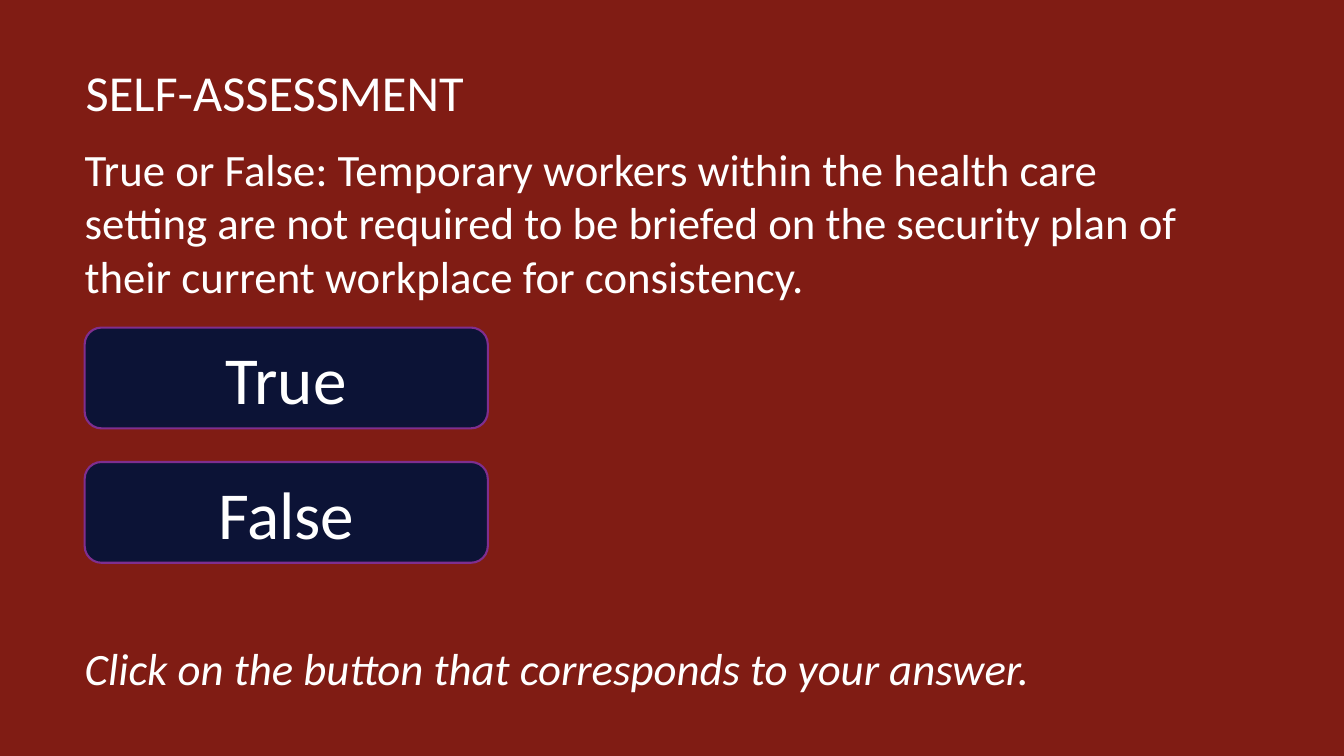
from pptx import Presentation
from pptx.dml.color import RGBColor
from pptx.enum import shapes, text
from pptx.util import Pt

FONT = "Calibri"
WHITE = "FFFFFF"
RED = "801C14"
NAVY = "0C1336"
PURPLE = "7F2E8F"
LEFT = 60.5
TEXT_WIDTH = 781.2


def rgb(value):
    return RGBColor.from_string(value)


def add_run(p, words, size, italic=False):
    r = p.add_run()
    r.text = words
    r.font.name = FONT
    r.font.size = Pt(size)
    r.font.italic = italic
    r.font.color.rgb = rgb(WHITE)


def set_frame(tf, anchor, inset=0):
    """Wrap the text, anchor it and give it equal insets."""
    tf.word_wrap = True
    tf.auto_size = text.MSO_AUTO_SIZE.NONE
    tf.vertical_anchor = anchor
    tf.margin_left = tf.margin_top = tf.margin_right = tf.margin_bottom = Pt(inset)


def set_title(slide, words):
    sp = slide.shapes.title
    sp.left, sp.top, sp.width, sp.height = Pt(LEFT), Pt(42), Pt(367), Pt(46)
    tf = sp.text_frame
    set_frame(tf, text.MSO_ANCHOR.MIDDLE)
    tf.margin_left = Pt(0.7)
    p = tf.paragraphs[0]
    p.alignment = text.PP_ALIGN.LEFT
    add_run(p, words, 36)


def add_text(slide, top, height, runs, italic=False):
    sp = slide.shapes.add_textbox(Pt(LEFT), Pt(top), Pt(TEXT_WIDTH), Pt(height))
    set_frame(sp.text_frame, text.MSO_ANCHOR.TOP)
    for words in runs:
        add_run(sp.text_frame.paragraphs[0], words, 32, italic)


def add_button(slide, top, label):
    sp = slide.shapes.add_shape(shapes.MSO_SHAPE.ROUNDED_RECTANGLE,
                                Pt(LEFT), Pt(top), Pt(288), Pt(72))
    sp.shadow.inherit = False
    sp.fill.solid()
    sp.fill.fore_color.rgb = rgb(NAVY)
    sp.line.color.rgb = rgb(PURPLE)
    sp.line.width = Pt(1.5)
    set_frame(sp.text_frame, text.MSO_ANCHOR.MIDDLE, 3.6)
    p = sp.text_frame.paragraphs[0]
    p.alignment = text.PP_ALIGN.CENTER
    add_run(p, label, 48)


def main():
    prs = Presentation()
    prs.slide_width, prs.slide_height = Pt(960), Pt(540)
    slide = prs.slides.add_slide(prs.slide_layouts[5])
    slide.background.fill.solid()
    slide.background.fill.fore_color.rgb = rgb(RED)

    set_title(slide, "SELF-ASSESSMENT")
    add_text(slide, 101, 120, [
        "True or False: ",
        "Temporary workers within the health care setting are not required to be "
        "briefed on the security plan of their current workplace for consistency.",
    ])
    for i, label in enumerate(["True", "False"]):
        add_button(slide, 234 + 96 * i, label)
    add_text(slide, 457.5, 42,
             ["Click on the button that corresponds to your answer."], italic=True)
    prs.save("out.pptx")


if __name__ == "__main__":
    main()
